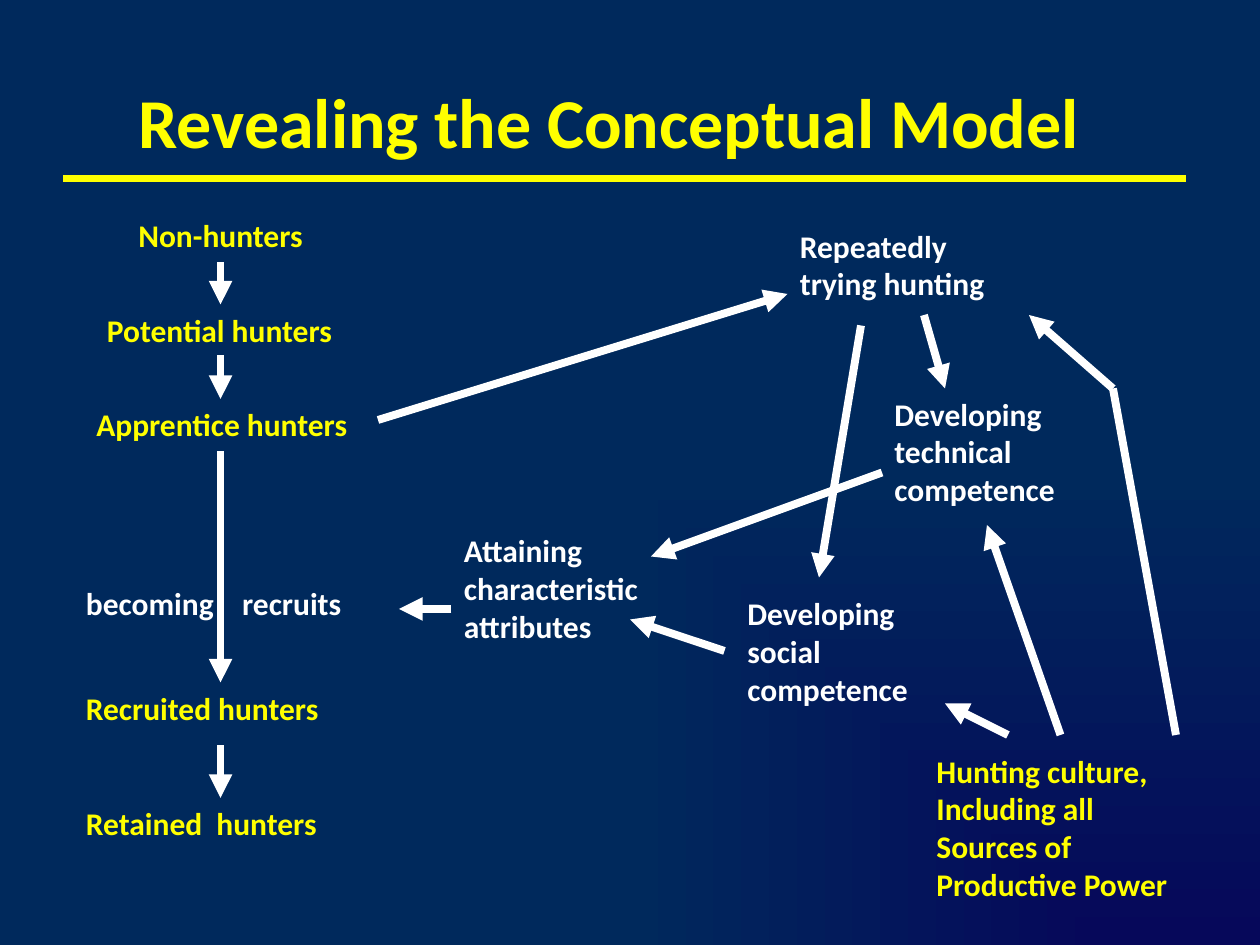
from lxml import etree
from pptx import Presentation
from pptx import util as u
from pptx.dml.color import RGBColor
from pptx.enum import shapes, text
from pptx.oxml.ns import qn

YELLOW, WHITE = "FFFF00", "FFFFFF"
NAVY, INDIGO = "00295C", "06085A"
FONT = "Calibri"
COLS, ROWS = 120, 90  # grid laid over the whole slide

TITLE = "Revealing the Conceptual Model"

# lines of text, colour, column, row, width in inches
LABELS = [
    ("Non-hunters", YELLOW, 12, 20, 1.67),
    ("Potential hunters", YELLOW, 9, 29, 2),
    ("Apprentice hunters", YELLOW, 8, 38, 2.27),
    ("becoming\trecruits", WHITE, 7, 55, 2.25),
    ("Recruited hunters", YELLOW, 7, 65, 2.06),
    ("Retained  hunters", YELLOW, 7, 76, 2.05),
    ("Repeatedly\ntrying hunting", WHITE, 75, 21, 1.68),
    ("Developing\ntechnical\ncompetence", WHITE, 84, 37, 1.49),
    ("Developing\nsocial\ncompetence", WHITE, 70, 56, 1.54),
    ("Attaining\ncharacteristic\nattributes", WHITE, 43, 50, 1.59),
    ("Hunting culture,\nIncluding all\nSources of\nProductive Power", YELLOW, 88, 71, 2.11),
]

# start and end as (column, row)
STAGE_COL = 21
STAGE_ROWS = [(25, 29), (34, 38), (43, 65), (71, 76)]
ARROWS = [((STAGE_COL, a), (STAGE_COL, b)) for a, b in STAGE_ROWS] + [
    ((36, 40), (75, 28)),    # apprentices to trying
    ((88, 30), (90, 37)),    # trying to technical
    ((82, 31), (78, 55)),    # trying to social
    ((84, 45), (62, 53)),    # technical to attributes
    ((69, 62), (60, 59)),    # social to attributes
    ((43, 58), (38, 58)),    # attributes to recruits
    ((96, 70), (90, 67)),    # culture to social
    ((101, 70), (94, 50)),   # culture to technical
    ((106, 37), (98, 30)),   # culture to trying, after the bend
]
BEND = ((112, 70), (106, 37))
TITLE_RULE = ((6, 17), (113, 17))

prs = Presentation()
prs.slide_width, prs.slide_height = u.Inches(10), u.Inches(7.5)
slide = prs.slides.add_slide(prs.slide_layouts[5])


def colour(value):
    return RGBColor.from_string(value)


def x(col):
    return int(prs.slide_width * col / COLS)


def y(row):
    return int(prs.slide_height * row / ROWS)


def style(frame, size, value):
    for paragraph in frame.paragraphs:
        for run in paragraph.runs:
            run.font.name, run.font.size, run.font.bold = FONT, u.Pt(size), True
            run.font.color.rgb = colour(value)


def add_line(start, end, value=WHITE, arrow=False):
    line = slide.shapes.add_connector(
        shapes.MSO_CONNECTOR.STRAIGHT, x(start[0]), y(start[1]), x(end[0]), y(end[1]))
    line.line.color.rgb = colour(value)
    line.line.width = u.Pt(4.5)
    if arrow:
        etree.SubElement(line.line._get_or_add_ln(), qn("a:tailEnd"), type="triangle")
    etree.SubElement(line._element.spPr, qn("a:effectLst"))
    return line


def add_label(words, value, col, row, width):
    height = 0.1 + 0.3 * len(words.split("\n"))
    box = slide.shapes.add_textbox(x(col), y(row), u.Inches(width), u.Inches(height))
    frame = box.text_frame
    frame.text = words
    frame.word_wrap = True
    frame.auto_size = text.MSO_AUTO_SIZE.SHAPE_TO_FIT_TEXT
    style(frame, 18, value)
    if "\t" in words:  # second word starts right of the stage arrow
        stops = etree.SubElement(frame.paragraphs[0]._p.get_or_add_pPr(), qn("a:tabLst"))
        etree.SubElement(stops, qn("a:tab"), pos=str(u.Inches(1.24)), algn="l")
    return box


# Background: glow from the bottom right corner
fill = slide.background.fill
fill.gradient()
for stop, value in zip(fill.gradient_stops, (INDIGO, NAVY)):
    stop.color.rgb = colour(value)
linear = slide.element.find(".//" + qn("a:lin"))
glow = etree.Element(qn("a:path"), {"path": "rect"})
etree.SubElement(glow, qn("a:fillToRect"), l="100000", t="100000")
linear.getparent().replace(linear, glow)

# Title and its rule
title = slide.shapes.title
title.left, title.top, title.width, title.height = x(4), y(4), x(108), y(15)
title.text_frame.text = TITLE
title.text_frame.vertical_anchor = text.MSO_ANCHOR.MIDDLE
title.text_frame.paragraphs[0].alignment = text.PP_ALIGN.CENTER
style(title.text_frame, 40, YELLOW)
add_line(*TITLE_RULE, value=YELLOW)

# Labels and arrows
boxes = {label[0]: add_label(*label) for label in LABELS}
add_line(*BEND)
arrows = [add_line(*ends, arrow=True) for ends in ARROWS]
arrows[0].end_connect(boxes["Potential hunters"], 0)
arrows[1].begin_connect(boxes["Potential hunters"], 2)

prs.save("out.pptx")
